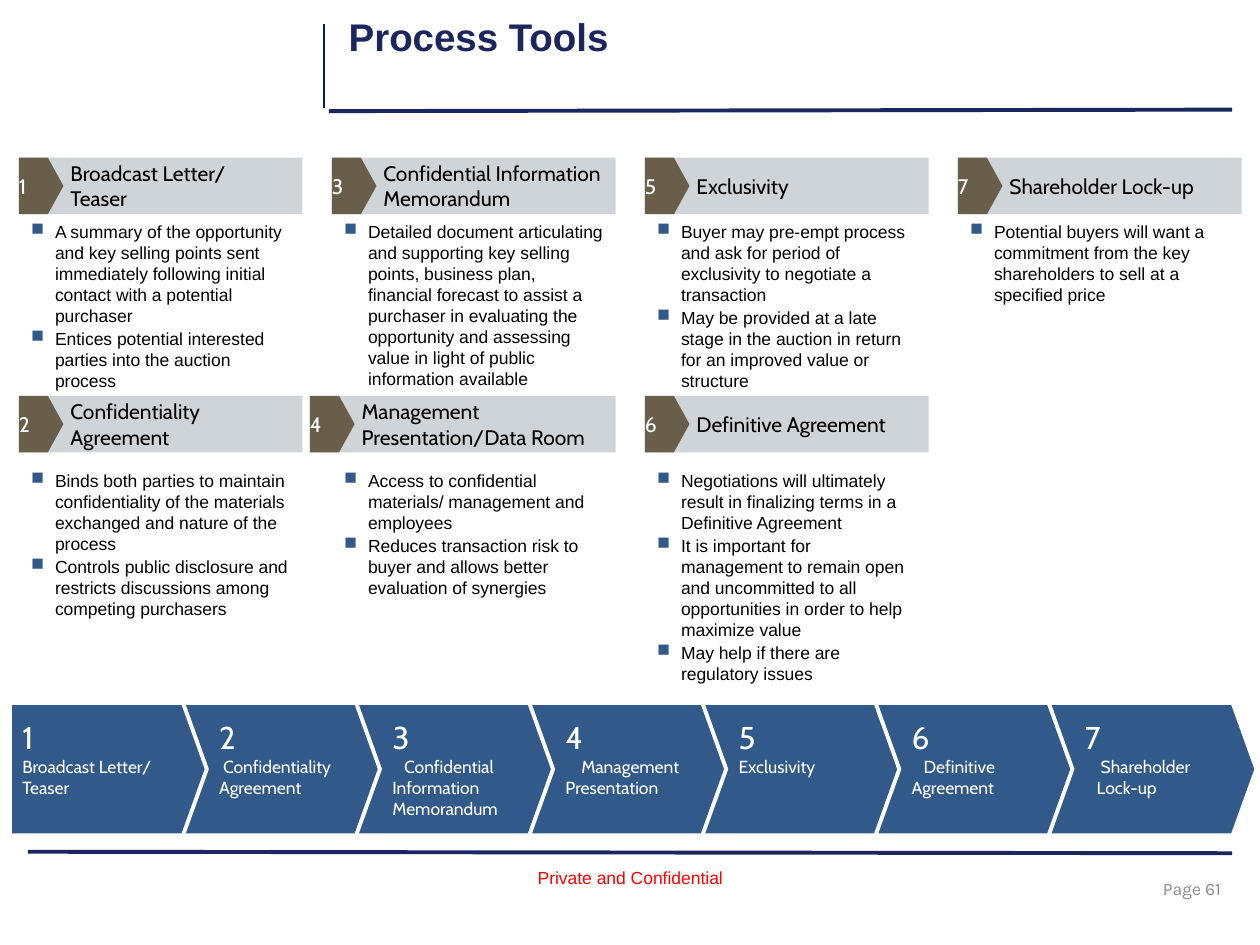
from dataclasses import dataclass

from lxml import etree
from pptx import Presentation
from pptx.dml.color import RGBColor
from pptx.enum.shapes import MSO_CONNECTOR, MSO_SHAPE
from pptx.enum.text import MSO_ANCHOR, PP_ALIGN
from pptx.oxml.ns import qn
from pptx.util import Cm, Pt

RECT, PENTAGON, CHEVRON = MSO_SHAPE.RECTANGLE, MSO_SHAPE.PENTAGON, MSO_SHAPE.CHEVRON
STRAIGHT = MSO_CONNECTOR.STRAIGHT
TOP, MIDDLE = MSO_ANCHOR.TOP, MSO_ANCHOR.MIDDLE
LEFT, CENTER, RIGHT = PP_ALIGN.LEFT, PP_ALIGN.CENTER, PP_ALIGN.RIGHT


@dataclass(frozen=True)
class Theme:
    navy: str = "1B265F"
    rule: str = "002368"
    blue: str = "31598A"
    brown: str = "695E4A"
    silver: str = "CFD4D8"
    gray: str = "8C8C8C"
    red: str = "FF0000"
    black: str = "000000"
    white: str = "FFFFFF"
    body_font: str = "Arial"
    label_font: str = "Cabin"
    page_font: str = "Karla"
    title_size: int = 22
    number_size: int = 18
    heading_size: int = 12
    body_size: int = 10


class SlideBuilder:
    def __init__(self, page, theme):
        self.page = page
        self.theme = theme

    def style(self, para, size, font, color, bold=False, align=LEFT):
        para.alignment = align
        para.font.size = Pt(size)
        para.font.name = font
        para.font.bold = bold
        para.font.color.rgb = RGBColor.from_string(color)

    def frame(self, box, anchor=TOP, insets=(0.25, 0.13, 0.25, 0.13)):
        frame = box.text_frame
        frame.word_wrap = True
        frame.vertical_anchor = anchor
        (frame.margin_left, frame.margin_top,
         frame.margin_right, frame.margin_bottom) = map(Cm, insets)
        return frame

    def paragraphs(self, frame, texts):
        for index, text in enumerate(texts):
            para = frame.paragraphs[0] if index == 0 else frame.add_paragraph()
            para.text = text
            yield para

    def title(self, text, *place):
        box = self.page.shapes.title
        box.left, box.top, box.width, box.height = map(Cm, place)
        frame = self.frame(box)
        frame.text = text
        self.style(frame.paragraphs[0], self.theme.title_size,
                   self.theme.body_font, self.theme.navy, bold=True)

    def line(self, x1, y1, x2, y2, color, width):
        line = self.page.shapes.add_connector(STRAIGHT, *map(Cm, (x1, y1, x2, y2)))
        line.line.color.rgb = RGBColor.from_string(color)
        line.line.width = Pt(width)
        etree.SubElement(line._element.spPr, qn("a:effectLst"))

    def shape(self, kind, place, fill, adjust=None, outline=None):
        shape = self.page.shapes.add_shape(kind, *map(Cm, place))
        shape.shadow.inherit = False
        shape.fill.solid()
        shape.fill.fore_color.rgb = RGBColor.from_string(fill)
        if adjust is not None:
            shape.adjustments[0] = adjust
        if outline:
            shape.line.color.rgb = RGBColor.from_string(outline)
            shape.line.width = Pt(2.25)
        else:
            shape.line.fill.background()
        return shape

    def note(self, text, place, font, color, align, anchor=TOP):
        box = self.page.shapes.add_textbox(*map(Cm, place))
        frame = self.frame(box, anchor)
        frame.text = text
        self.style(frame.paragraphs[0], self.theme.body_size, font, color, align=align)

    def heading(self, number, lines, left, top, width):
        theme = self.theme
        bar = self.shape(RECT, (left, top, width, HEADING_HEIGHT), theme.silver)
        frame = self.frame(bar, MIDDLE, (1.04, 0, 0, 0))
        for para in self.paragraphs(frame, lines):
            self.style(para, theme.heading_size, theme.label_font, theme.black)
        badge = self.shape(PENTAGON, (left, top, 0.9, HEADING_HEIGHT), theme.brown, 0.35)
        frame = self.frame(badge, MIDDLE, (0, 0, 0, 0))
        frame.text = str(number)
        self.style(frame.paragraphs[0], theme.heading_size, theme.label_font, theme.white)

    def bullets(self, items, left, top, height):
        box = self.page.shapes.add_textbox(*map(Cm, (left, top, CARD_WIDTH, height)))
        for index, para in enumerate(self.paragraphs(self.frame(box), items)):
            props = para._p.get_or_add_pPr()
            props.set("marL", str(Cm(0.48)))
            props.set("indent", str(Cm(-0.48)))
            color = etree.SubElement(props, qn("a:buClr"))
            etree.SubElement(color, qn("a:srgbClr"), val=self.theme.blue)
            etree.SubElement(props, qn("a:buChar"), char="■")
            if index:
                para.space_before = Pt(1)
            self.style(para, self.theme.body_size, self.theme.body_font, self.theme.black)

    def step(self, number, lines, left):
        """Draw one process arrow; lines are (text, first-line indent) pairs."""
        theme = self.theme
        kind, adjust = (PENTAGON, 0.25) if number == 1 else (CHEVRON, 0.18)
        arrow = self.shape(kind, (left, 14.17, 4.19, 2.67), theme.blue, adjust, theme.white)
        frame = self.frame(arrow, TOP, (0.25, 0.3, 0.25, 0))
        rows = [(str(number), 0), *lines]
        texts = [text for text, _ in rows]
        for index, para in enumerate(self.paragraphs(frame, texts)):
            para._p.get_or_add_pPr().set("indent", str(Cm(rows[index][1])))
            size = theme.body_size if index else theme.number_size
            self.style(para, size, theme.label_font, theme.white)


# Card grid
GRID_LEFT, COLUMN_PITCH, CARD_WIDTH = 0.38, 6.31, 5.72
HEADING_HEIGHT = 1.14
HEADING_TOPS = (3.18, 7.98)
BODY_TOPS = (4.32, 9.35)
BODY_HEIGHTS = (3.25, 4.57)

# Heading lines, heading overhang to the left, bullets; filled column by column
CARDS = [
    (["Broadcast Letter/", "Teaser"], 0,
     ["A summary of the opportunity and key selling points sent immediately "
      "following initial contact with a potential purchaser",
      "Entices potential interested parties into the auction process"]),
    (["Confidentiality", "Agreement"], 0,
     ["Binds both parties to maintain confidentiality of the materials exchanged "
      "and nature of the process",
      "Controls public disclosure and restricts discussions among competing purchasers"]),
    (["Confidential Information", "Memorandum"], 0,
     ["Detailed document articulating and supporting key selling points, business plan, "
      "financial forecast to assist a purchaser in evaluating the opportunity and "
      "assessing value in light of public information available"]),
    (["Management", "Presentation/Data Room"], 0.44,
     ["Access to confidential materials/ management and employees",
      "Reduces transaction risk to buyer and allows better evaluation of synergies"]),
    (["Exclusivity"], 0,
     ["Buyer may pre-empt process and ask for period of exclusivity to negotiate "
      "a transaction",
      "May be provided at a late stage in the auction in return for an improved "
      "value or structure"]),
    (["Definitive Agreement"], 0,
     ["Negotiations will ultimately result in finalizing terms in a Definitive Agreement",
      "It is important for management to remain open and uncommitted to all "
      "opportunities in order to help maximize value",
      "May help if there are regulatory issues"]),
    (["Shareholder Lock-up"], 0,
     ["Potential buyers will want a commitment from the key shareholders to sell "
      "at a specified price"]),
]

STEPS = [
    [("Broadcast Letter/", 0), ("Teaser", 0)],
    [("Confidentiality Agreement", 0.08)],
    [("Confidential Information Memorandum", 0.24)],
    [("Management Presentation", 0.32)],
    [("Exclusivity", 0)],
    [("Definitive Agreement", 0.24)],
    [("Shareholder", 0.32), ("Lock-up", 0.24)],
]


def main():
    deck = Presentation()
    deck.slide_width, deck.slide_height = Cm(25.4), Cm(19.05)
    theme = Theme()
    slide = SlideBuilder(deck.slides.add_slide(deck.slide_layouts[5]), theme)

    # Title and rules
    slide.title("Process Tools", 6.78, 0.13, 18.21, 1.9)
    slide.line(6.53, 0.48, 6.53, 2.18, theme.rule, 0.75)
    slide.line(6.63, 2.24, 24.84, 2.21, theme.navy, 2.25)
    slide.line(0.56, 17.17, 24.84, 17.2, theme.navy, 2.25)

    # Numbered cards
    for index, (lines, overhang, items) in enumerate(CARDS):
        column, row = divmod(index, 2)
        left = GRID_LEFT + column * COLUMN_PITCH
        slide.heading(index + 1, lines, left - overhang, HEADING_TOPS[row],
                      CARD_WIDTH + overhang)
        slide.bullets(items, left, BODY_TOPS[row], BODY_HEIGHTS[row])

    # Process arrows
    for index, lines in enumerate(STEPS):
        slide.step(index + 1, lines, 0.2 + index * 3.49)

    # Footer
    slide.note("Private and Confidential", (10.57, 17.35, 4.27, 0.69),
               theme.body_font, theme.red, CENTER)
    slide.note("Page 61", (19.02, 17.4, 5.84, 1.02),
               theme.page_font, theme.gray, RIGHT, MIDDLE)

    deck.save("out.pptx")


if __name__ == "__main__":
    main()
